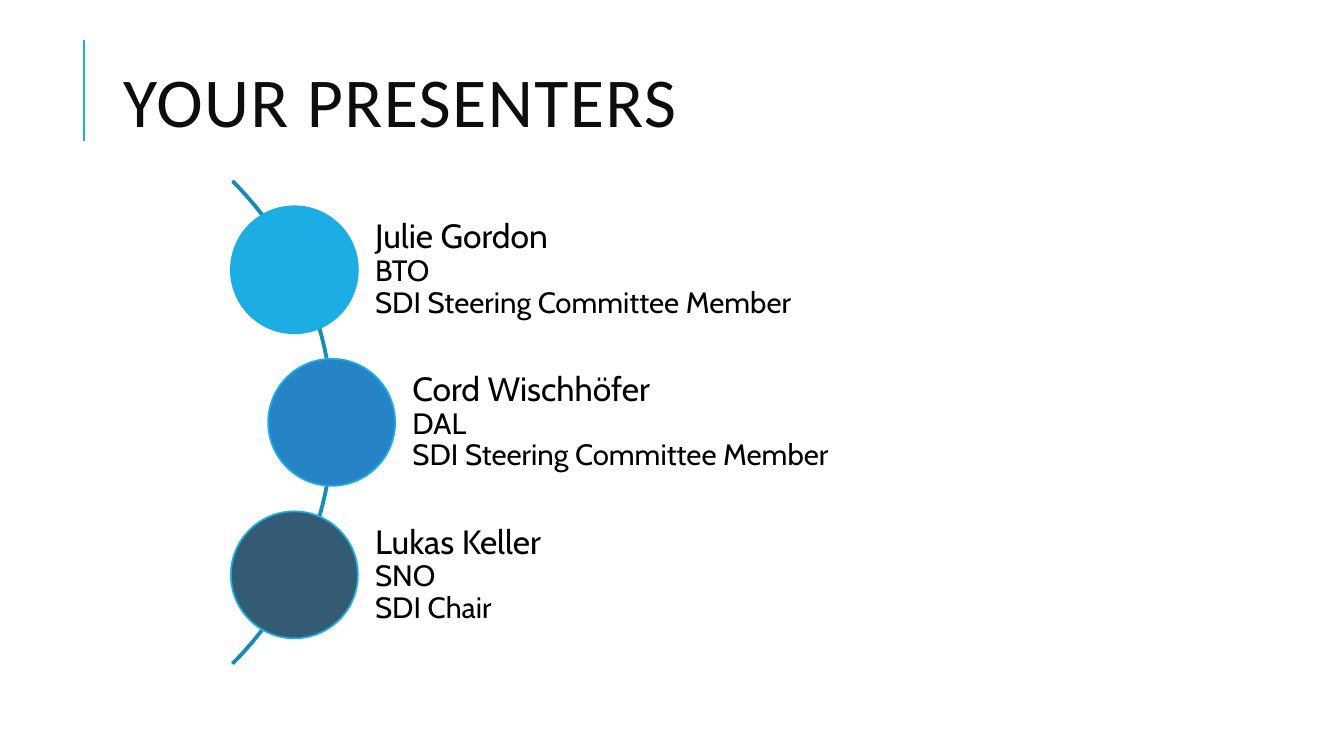
from pptx import Presentation
from pptx import util as u
from pptx.dml.color import RGBColor
from pptx.enum import shapes, text
from pptx.oxml import parse_xml
from pptx.oxml.ns import nsdecls

INK = RGBColor(0x0D, 0x0D, 0x0D)
BLACK = RGBColor(0, 0, 0)
WHITE = RGBColor(0xFF, 0xFF, 0xFF)
SKY = RGBColor(0x1C, 0xAD, 0xE4)
BLUE = RGBColor(0x26, 0x83, 0xC6)
SLATE = RGBColor(0x33, 0x5B, 0x74)
ARC_BLUE = RGBColor(0x16, 0x8B, 0xB7)

PRESENTERS = [
    (("Julie Gordon", "BTO", "SDI Steering Committee Member"), SKY, 0),
    (("Cord Wischhöfer", "DAL", "SDI Steering Committee Member"), BLUE, 0.37),
    (("Lukas Keller", "SNO", "SDI Chair"), SLATE, 0),
]
CIRCLE = 1.26
LABEL_HEIGHT = 1.01
ARC = 6.78
ARC_RIGHT = 1.02


def inches(*lengths):
    """Convert lengths in inches to slide units."""
    return [u.Inches(length) for length in lengths]


def add_outlined(page, kind, box, line, fill=None):
    """Add a preset shape with a thin outline and an optional fill."""
    shape = page.shapes.add_shape(kind, *inches(*box))
    shape.shadow.inherit = False
    if fill is None:
        shape.fill.background()
    else:
        shape.fill.solid()
        shape.fill.fore_color.rgb = fill
    shape.line.color.rgb = line
    shape.line.width = u.Pt(1.25)
    return shape


def style_span(span, font, size, color):
    """Set the font of one run."""
    span.font.name = font
    span.font.size = u.Pt(size)
    span.font.color.rgb = color


def add_heading(page, box):
    """Format the title and draw the accent line to its left."""
    left, top, width, height = box
    title = page.shapes.title
    title.left, title.top, title.width, title.height = inches(*box)
    frame = title.text_frame
    frame.text = "YOUR PRESENTERS"
    frame.word_wrap = True
    frame.vertical_anchor = text.MSO_ANCHOR.MIDDLE
    para = frame.paragraphs[0]
    para.alignment = text.PP_ALIGN.LEFT
    para.line_spacing = 0.8
    span = para.runs[0]
    style_span(span, "Calibri", 50, INK)
    span.font._element.set("spc", "100")

    x, y = left - 0.29, top + 0.16
    accent = page.shapes.add_connector(
        shapes.MSO_CONNECTOR.STRAIGHT, *inches(x, y + 1, x, y))
    accent.line.color.rgb = SKY
    accent.line.width = u.Pt(1.5)
    accent._element.spPr.append(parse_xml(f"<a:effectLst {nsdecls('a')}/>"))


def add_presenter(page, box, lines, color):
    """Add a label and the circle that covers its left end."""
    left, top, width, height = box
    middle = top + height / 2
    label_left = left + CIRCLE / 2
    label = add_outlined(
        page, shapes.MSO_SHAPE.RECTANGLE,
        (label_left, middle - LABEL_HEIGHT / 2, width - CIRCLE / 2, LABEL_HEIGHT),
        WHITE)
    frame = label.text_frame
    frame.word_wrap = True
    frame.vertical_anchor = text.MSO_ANCHOR.MIDDLE
    frame.margin_left = u.Inches(0.8)
    frame.margin_top = frame.margin_right = frame.margin_bottom = u.Inches(0.07)
    para = frame.paragraphs[0]
    para.text = "\v".join(lines)
    para.alignment = text.PP_ALIGN.LEFT
    para.line_spacing = 0.9
    for span, size in zip(para.runs, (24, 21, 21)):
        style_span(span, "Cabin", size, BLACK)
    add_outlined(page, shapes.MSO_SHAPE.OVAL,
                 (left, middle - CIRCLE / 2, CIRCLE, CIRCLE), SKY, color)


def add_presenters(page, box):
    """Draw the arc and place the presenters in equal rows along it."""
    left, top, width, height = box
    arc = add_outlined(
        page, shapes.MSO_SHAPE.BLOCK_ARC,
        (left + ARC_RIGHT - ARC, top + (height - ARC) / 2, ARC, ARC), ARC_BLUE)
    for index, value in enumerate((189, 27, 0.003)):
        arc.adjustments[index] = value
    row = height / len(PRESENTERS)
    for index, (lines, color, indent) in enumerate(PRESENTERS):
        add_presenter(page, (left + indent, top + index * row, width - indent, row),
                      lines, color)


def main():
    """Build and save the deck."""
    deck = Presentation()
    deck.slide_width, deck.slide_height = inches(13.33, 7.5)
    page = deck.slides.add_slide(deck.slide_layouts[5])
    add_heading(page, (1.12, 0.24, 10.63, 1.64))
    add_presenters(page, (2.29, 1.92, 8.75, 4.54))
    deck.save("out.pptx")


if __name__ == "__main__":
    main()
